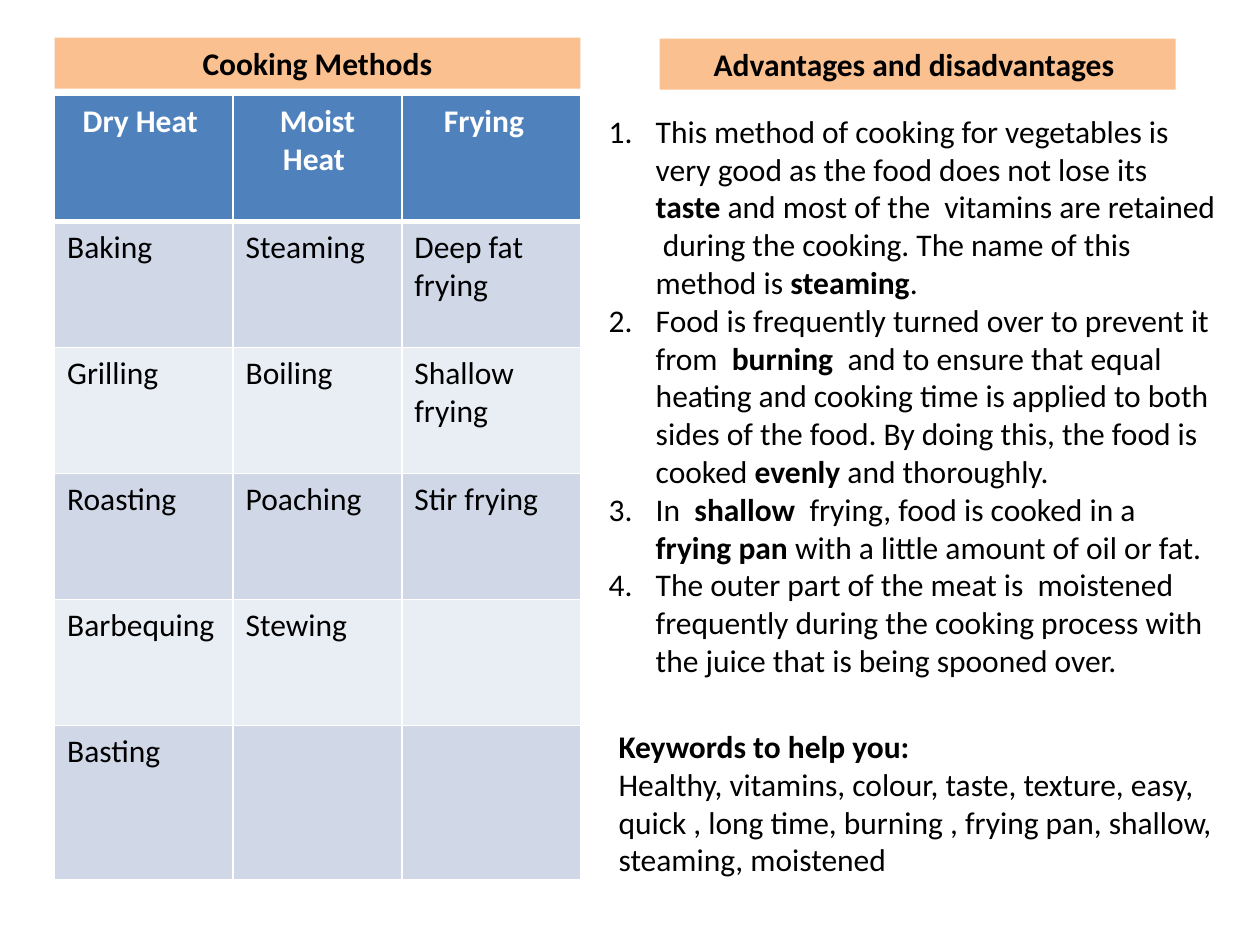
from dataclasses import dataclass

from lxml import etree
from pptx import Presentation
from pptx.dml.color import RGBColor as RGB
from pptx.enum.shapes import MSO_SHAPE as Shape
from pptx.enum.text import MSO_ANCHOR as Anchor, PP_ALIGN as Align
from pptx.oxml.ns import qn
from pptx.util import Cm, Pt


@dataclass(frozen=True)
class Theme:
    font: str = "Calibri"
    size: float = 18
    text: str = "000000"
    white: str = "FFFFFF"
    heading: str = "FAC090"
    header_row: str = "4F81BD"
    bands: tuple = ("D0D8E8", "E9EDF4")
    thin: float = 1
    thick: float = 3


class Deck:
    """Holds the theme and the current slide."""

    def __init__(self, theme):
        self.theme = theme
        self.prs = Presentation()
        self.prs.slide_width, self.prs.slide_height = Cm(25.4), Cm(19.05)

    def add_slide(self):
        self.s = self.prs.slides.add_slide(self.prs.slide_layouts[6])

    def style(self, r, color, bold):
        f = r.font
        f.name, f.size, f.bold = self.theme.font, Pt(self.theme.size), bold
        f.color.rgb = RGB.from_string(color)

    def fill(self, target, color):
        target.fill.solid()
        target.fill.fore_color.rgb = RGB.from_string(color)

    def heading(self, text, *box):
        sp = self.s.shapes.add_shape(Shape.RECTANGLE, *map(Cm, box))
        sp.shadow.inherit = False
        self.fill(sp, self.theme.heading)
        sp.line.fill.background()
        tf = sp.text_frame
        tf.word_wrap, tf.vertical_anchor = True, Anchor.TOP
        p = tf.paragraphs[0]
        p.text, p.alignment = text, Align.CENTER
        self.style(p.runs[0], self.theme.text, True)

    def text(self, paragraphs, *box, numbered=False):
        """Parts between ** marks are bold."""
        tf = self.s.shapes.add_textbox(*map(Cm, box)).text_frame
        tf.word_wrap = True
        for i, line in enumerate(paragraphs):
            p = tf.add_paragraph() if i else tf.paragraphs[0]
            for j, part in enumerate(line.split("**")):
                if part:
                    r = p.add_run()
                    r.text = part
                    self.style(r, self.theme.text, j % 2 == 1)
            if numbered:
                self.number(p)

    def number(self, p):
        pPr = p._p.get_or_add_pPr()
        indent = Cm(0.95)
        pPr.set("marL", str(indent))
        pPr.set("indent", str(-indent))
        etree.SubElement(pPr, qn("a:buFont"), typeface="+mj-lt")
        etree.SubElement(pPr, qn("a:buAutoNum"), type="arabicPeriod")

    def borders(self, cell, top, bottom):
        tcPr = cell._tc.get_or_add_tcPr()
        thin = self.theme.thin
        for side, width in zip("LRTB", (thin, thin, top, bottom)):
            ln = etree.SubElement(tcPr, qn(f"a:ln{side}"), w=str(Pt(width)))
            solid = etree.SubElement(ln, qn("a:solidFill"))
            etree.SubElement(solid, qn("a:srgbClr"), val=self.theme.white)

    def table(self, rows, left, top, widths, heights):
        t = self.theme
        box = (left, top, sum(widths), sum(heights))
        table = self.s.shapes.add_table(
            len(rows), len(widths), *map(Cm, box)).table
        for col, width in zip(table.columns, widths):
            col.width = Cm(width)
        for i, (row, height, texts) in enumerate(zip(table.rows, heights, rows)):
            row.height = Cm(height)
            header = i == 0
            for cell, text in zip(row.cells, texts):
                self.borders(cell, t.thick if i == 1 else t.thin,
                             t.thick if header else t.thin)
                self.fill(cell, t.header_row if header else t.bands[(i - 1) % 2])
                p = cell.text_frame.paragraphs[0]
                p.text = text
                p.alignment = Align.CENTER if header else Align.LEFT
                for r in p.runs:
                    self.style(r, t.white if header else t.text, header)


METHODS = [
    ("Dry Heat ", "Moist Heat ", "Frying  "),
    ("Baking", "Steaming", "Deep fat frying"),
    ("Grilling", "Boiling", "Shallow frying"),
    ("Roasting", "Poaching", "Stir frying"),
    ("Barbequing", "Stewing", ""),
    ("Basting", "", ""),
]
STATEMENTS = [
    "This method of cooking for vegetables is very good as the food does not "
    "lose its **taste **and most of the  vitamins are retained  during the "
    "cooking. The name of this method is **steaming**.",
    "Food is frequently turned over to prevent it from  **burning**  and to "
    "ensure that equal heating and cooking time is applied to both sides of "
    "the food. By doing this, the food is cooked **evenly** and thoroughly.",
    "In  **shallow**  frying, food is cooked in a **frying pan **with a "
    "little amount of oil or fat.",
    "The outer part of the meat is  moistened frequently during the cooking "
    "process with the juice that is being spooned over.",
]
KEYWORDS = [
    "**Keywords to help you:**",
    "Healthy, vitamins, colour, taste, texture, easy, quick , long time, "
    "burning , frying pan, shallow, steaming, moistened",
]


def main():
    deck = Deck(Theme())
    deck.add_slide()

    # Left column: methods table under its heading
    deck.table(METHODS, 1.1, 1.93, (3.6, 3.4, 3.6), [2.54] * 5 + [3.1])
    deck.heading("Cooking Methods", 1.1, 0.76, 10.6, 1.03)

    # Right column: numbered statements and keywords
    deck.heading("Advantages and disadvantages ", 13.3, 0.78, 10.4, 1.03)
    deck.text(STATEMENTS, 12.02, 2.13, 12.8, 13.34, numbered=True)
    deck.text(KEYWORDS, 12.22, 14.53, 12.6, 3.33)

    deck.prs.save("out.pptx")


if __name__ == "__main__":
    main()
